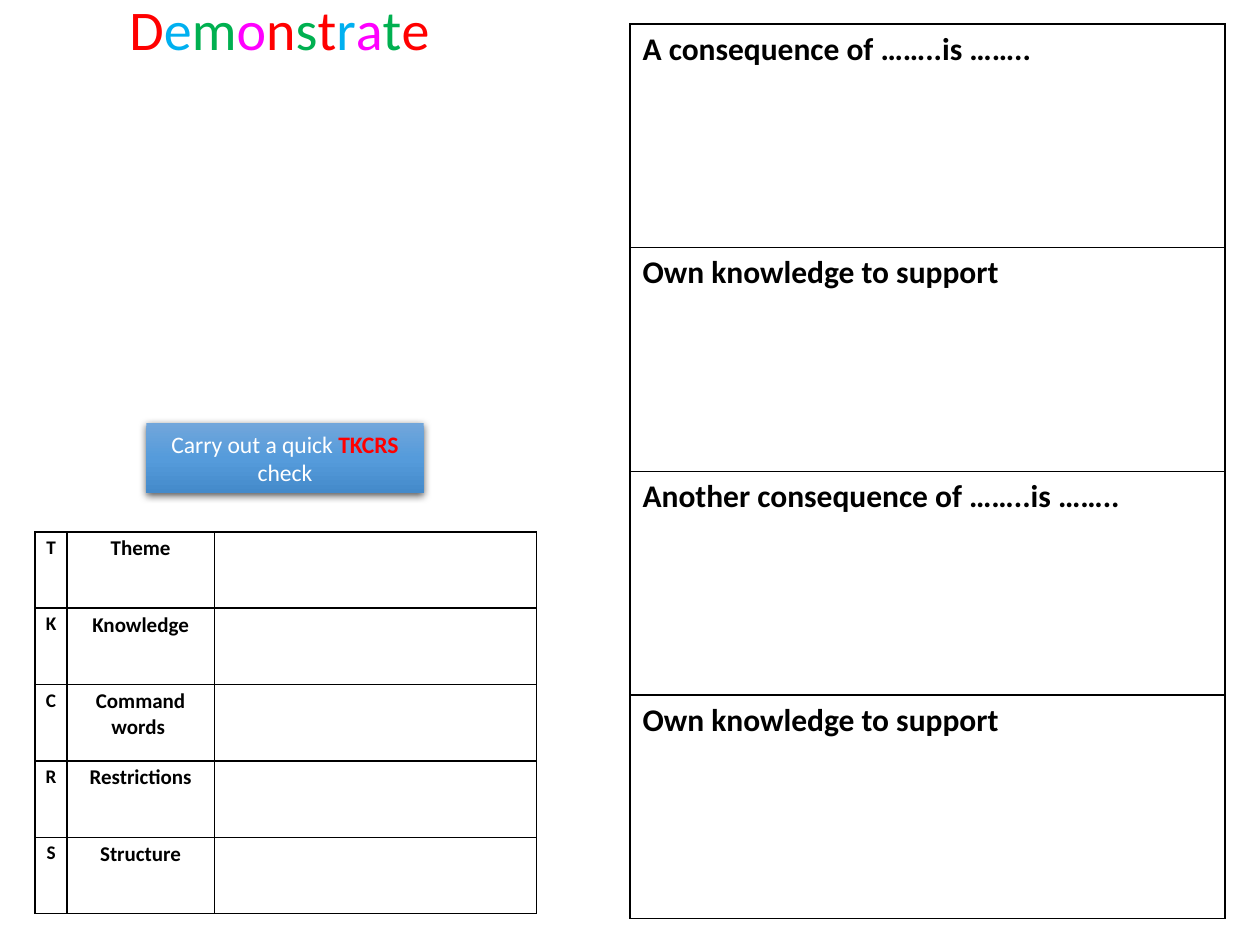
from copy import deepcopy
from pptx import Presentation
from pptx.dml.color import RGBColor
from pptx.enum.shapes import MSO_SHAPE as Shape
from pptx.enum.text import MSO_ANCHOR as Anchor, PP_ALIGN as Align
from pptx.oxml import parse_xml
from pptx.oxml.ns import nsdecls, qn
from pptx.util import Cm, Pt

RED, BLUE, GREEN, PINK = "FF0000", "00B0F0", "00B050", "FF00FF"
BLACK, WHITE = "000000", "FFFFFF"


def rgb(code):
    return RGBColor.from_string(code)


def write(frame, lines, size=18, color=BLACK, bold=False, align=Align.LEFT):
    """Each line is a string, or a list of (text, color, bold) runs."""
    frame.word_wrap = True
    for i, line in enumerate(lines):
        para = frame.paragraphs[0] if i == 0 else frame.add_paragraph()
        para.alignment = align
        runs = [(line, color, bold)] if isinstance(line, str) else line
        for text, tint, heavy in runs:
            run = para.add_run()
            run.text = text
            font = run.font
            font.name, font.size, font.bold = "Calibri", Pt(size), heavy
            font.color.rgb = rgb(tint)


def edge(cell):
    props = cell._tc.get_or_add_tcPr()
    for side in ("lnL", "lnR", "lnT", "lnB"):
        props.append(parse_xml(
            f'<a:{side} {nsdecls("a")} w="{Pt(1)}"><a:solidFill>'
            f'<a:srgbClr val="{BLACK}"/></a:solidFill></a:{side}>'))


def grid(slide, box, rows, widths):
    """Add a plain ruled table with equal rows."""
    table = slide.shapes.add_table(rows, len(widths), *map(Cm, box)).table
    table.first_row = table.horz_banding = False
    for col, width in zip(table.columns, widths):
        col.width = Cm(width)
    for row in table.rows:
        row.height = Cm(box[3] / rows)
        for cell in row.cells:
            edge(cell)
            cell.fill.background()
    return table


def title(slide, box):
    frame = slide.shapes.add_textbox(*map(Cm, box)).text_frame
    tints = [RED, BLUE, GREEN, PINK, RED, GREEN, RED, BLUE, PINK, GREEN, RED]
    runs = [(char, tint, False) for char, tint in zip("Demonstrate", tints)]
    write(frame, [runs], size=32)


def button(slide, box):
    shape = slide.shapes.add_shape(Shape.RECTANGLE, *map(Cm, box))
    shape.line.fill.background()

    # Three-stop gradient, top to bottom
    fill = shape.fill
    fill.gradient()
    fill.gradient_angle = 270
    stops = shape._element.spPr.find(qn("a:gradFill")).find(qn("a:gsLst"))
    stops.insert(1, deepcopy(stops[0]))
    shades = [(0, "71A6DB"), (0.5, "559BDB"), (1, "448ACA")]
    for stop, (place, shade) in zip(fill.gradient_stops, shades):
        stop.position = place
        stop.color.rgb = rgb(shade)

    # Soft shadow below
    shape.shadow.inherit = False
    shape._element.spPr.find(qn("a:effectLst")).append(parse_xml(
        f'<a:outerShdw {nsdecls("a")} blurRad="{Pt(4.5)}" dist="{Pt(1.5)}" '
        f'dir="5400000" algn="ctr" rotWithShape="0"><a:srgbClr val="{BLACK}">'
        '<a:alpha val="63000"/></a:srgbClr></a:outerShdw>'))

    frame = shape.text_frame
    frame.vertical_anchor = Anchor.MIDDLE
    write(frame, [[("Carry out a quick ", WHITE, False), ("TKCRS", RED, True),
                   (" check", WHITE, False)]], size=13.5, align=Align.CENTER)


def checks(slide, box):
    words = [["Theme"], ["Knowledge"], ["Command", "words "],
             ["Restrictions"], ["Structure"]]
    thin, mid = 0.64, 2.97
    table = grid(slide, box, len(words), [thin, mid, box[2] - thin - mid])
    for row, lines in enumerate(words):
        for col, (part, size) in enumerate([([lines[0][0]], 11), (lines, 12)]):
            cell = table.cell(row, col)
            cell.margin_left = cell.margin_right = Cm(0.15)
            cell.margin_top = cell.margin_bottom = Cm(0.08)
            write(cell.text_frame, part, size=size, bold=True,
                  align=Align.CENTER)


def answer(slide, box):
    prompts = ["A consequence of ……..is ……..", "Own knowledge to support",
               "Another consequence of ……..is ……..", "Own knowledge to support"]
    table = grid(slide, box, len(prompts), [box[2]])
    for row, prompt in enumerate(prompts):
        write(table.cell(row, 0).text_frame, [prompt], bold=True)


def main():
    deck = Presentation()
    deck.slide_width, deck.slide_height = Cm(25.4), Cm(19.05)
    slide = deck.slides.add_slide(deck.slide_layouts[6])

    # Left half: title, prompt and checklist
    button(slide, (2.95, 8.53, 5.59, 1.42))
    checks(slide, (0.71, 10.72, 10.11, 7.7))
    title(slide, (2.36, -0.23, 13.59, 1.63))

    # Right half: answer frame
    answer(slide, (12.7, 0.48, 11.99, 18.04))

    deck.save("out.pptx")


if __name__ == "__main__":
    main()
